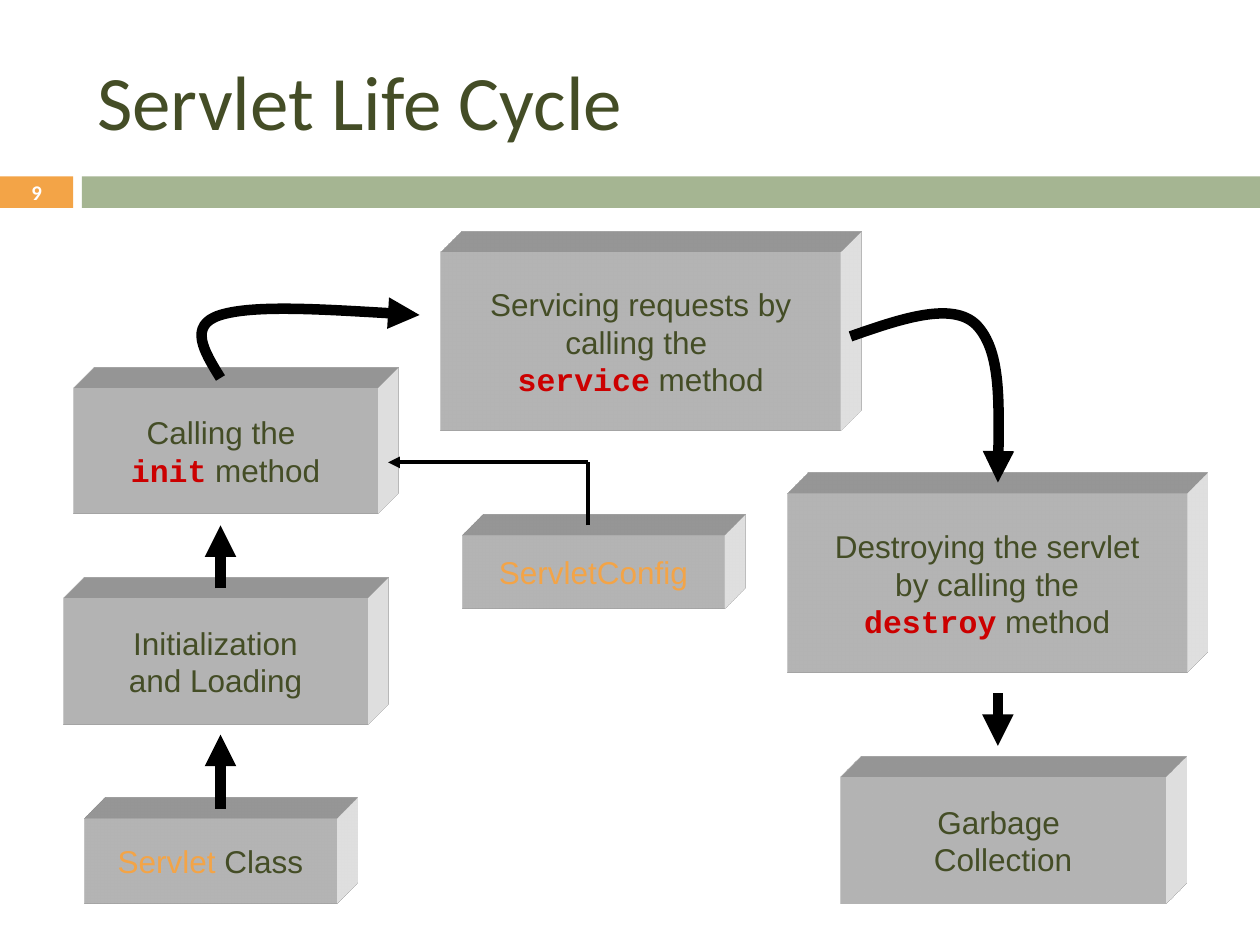
"""Build the Servlet Life Cycle slide."""
import pptx
import pptx.util
import pptx.dml.color
import pptx.enum.shapes
import pptx.enum.text
import pptx.oxml
import pptx.oxml.ns

Inches = pptx.util.Inches
RGBColor = pptx.dml.color.RGBColor
MIDDLE = pptx.enum.text.MSO_ANCHOR.MIDDLE
LEFT = pptx.enum.text.PP_ALIGN.LEFT
CENTER = pptx.enum.text.PP_ALIGN.CENTER

OLIVE = RGBColor(0x44, 0x4D, 0x26)
ORANGE = RGBColor(0xF3, 0xA4, 0x47)
SAGE = RGBColor(0xA5, 0xB5, 0x92)
RED = RGBColor(0xCC, 0x00, 0x00)
BLACK = RGBColor(0x00, 0x00, 0x00)
WHITE = RGBColor(0xFF, 0xFF, 0xFF)

NAMESPACE = pptx.oxml.ns.nsdecls("a")
SCENE = (f'<a:scene3d {NAMESPACE}><a:camera prst="legacyObliqueTopRight"/>'
         '<a:lightRig rig="legacyFlat3" dir="b"/></a:scene3d>')
EXTRUSION = (f'<a:sp3d {NAMESPACE} extrusionH="430200" prstMaterial="legacyMatte">'
             '<a:bevelT w="13500" h="13500" prst="angle"/>'
             '<a:bevelB w="13500" h="13500" prst="angle"/>'
             f'<a:extrusionClr><a:srgbClr val="{WHITE}"/></a:extrusionClr></a:sp3d>')


def add_text(paragraph, text, font="Arial", size=18, color=OLIVE, bold=False):
    """Append a formatted run to a paragraph."""
    run = paragraph.add_run()
    run.text = text
    run.font.name = font
    run.font.size = pptx.util.Pt(size)
    run.font.color.rgb = color
    run.font.bold = bold


class SlideBuilder:
    """Hold the slide and the style of its elements."""

    code = {"font": "Courier New", "color": RED, "bold": True}
    accent = {"color": ORANGE}

    def __init__(self, slide):
        """Keep the slide to draw on."""
        self.slide = slide

    def title(self, text, left, top, width, height):
        """Place and format the title placeholder."""
        shape = self.slide.shapes.title
        shape.left, shape.top = Inches(left), Inches(top)
        shape.width, shape.height = Inches(width), Inches(height)
        shape.text_frame.vertical_anchor = MIDDLE
        paragraph = shape.text_frame.paragraphs[0]
        paragraph.alignment = LEFT
        add_text(paragraph, text, font="Calibri", size=44)

    def rectangle(self, left, top, width, height, color):
        """Add a plain filled rectangle."""
        shape = self.slide.shapes.add_shape(
            pptx.enum.shapes.MSO_SHAPE.RECTANGLE,
            Inches(left), Inches(top), Inches(width), Inches(height))
        shape.shadow.inherit = False
        shape.fill.solid()
        shape.fill.fore_color.rgb = color
        shape.line.fill.background()
        shape.text_frame.vertical_anchor = MIDDLE
        return shape

    def block(self, left, top, width, height, lines):
        """Add an extruded block with centred lines of text."""
        shape = self.rectangle(left, top, width, height, WHITE)
        for markup in (SCENE, EXTRUSION):
            shape._element.spPr.append(pptx.oxml.parse_xml(markup))
        frame = shape.text_frame
        frame.word_wrap = False
        for index, runs in enumerate(lines):
            paragraph = frame.add_paragraph() if index else frame.paragraphs[0]
            paragraph.alignment = CENTER
            for text, style in runs:
                add_text(paragraph, text, **style)

    def stroke(self, shape, width, arrow):
        """Format a line and its arrowhead."""
        shape.line.color.rgb = BLACK
        shape.line.width = pptx.util.Pt(width)
        if arrow:
            shape.line._get_or_add_ln().append(pptx.oxml.parse_xml(
                f'<a:tailEnd {NAMESPACE} type="triangle"/>'))

    def line(self, start, end, width=6, arrow=True):
        """Add a straight connector."""
        connector = self.slide.shapes.add_connector(
            pptx.enum.shapes.MSO_CONNECTOR.STRAIGHT,
            *(Inches(value) for value in (*start, *end)))
        self.stroke(connector, width, arrow)
        connector._element.spPr.append(pptx.oxml.parse_xml(
            f'<a:effectLst {NAMESPACE}/>'))

    def curve(self, start, *controls):
        """Add a curved arrow, with three control points per cubic segment."""
        points = [(Inches(x), Inches(y)) for x, y in (start, *controls)]
        builder = self.slide.shapes.build_freeform(*points[0])
        builder.add_line_segments(points[1:], close=False)
        shape = builder.convert_to_shape()
        segments = shape._element.findall(".//" + pptx.oxml.ns.qn("a:lnTo"))
        for index in range(0, len(segments), 3):
            cubic = pptx.oxml.parse_xml(f'<a:cubicBezTo {NAMESPACE}/>')
            segments[index].addprevious(cubic)
            for segment in segments[index:index + 3]:
                cubic.append(segment[0])
                segment.getparent().remove(segment)
        shape.shadow.inherit = False
        shape.fill.background()
        self.stroke(shape, 6, True)


def main():
    """Build and save the presentation."""
    presentation = pptx.Presentation()
    presentation.slide_width = Inches(10)
    presentation.slide_height = Inches(7.5)
    builder = SlideBuilder(
        presentation.slides.add_slide(presentation.slide_layouts[5]))
    code, accent = builder.code, builder.accent

    number = builder.rectangle(0, 1.4, 0.58, 0.25, ORANGE)
    paragraph = number.text_frame.paragraphs[0]
    paragraph.alignment = CENTER
    add_text(paragraph, "9", font="Calibri", size=11.9, color=WHITE, bold=True)
    builder.rectangle(0.65, 1.4, 9.35, 0.25, SAGE)
    builder.title("Servlet Life Cycle", 0.67, 0.25, 8.92, 1.08)

    blocks = [
        (0.67, 6.5, 2, 0.67, [[("Servlet", accent), (" Class", {})]]),
        (0.5, 4.75, 2.42, 1, [[("Initialization", {})], [("and Loading", {})]]),
        (0.58, 3.08, 2.42, 1,
         [[("Calling the ", {})], [("init", code), (" method", {})]]),
        (3.5, 2, 3.17, 1.42,
         [[("Servicing requests by", {})], [("calling the ", {})],
          [("service", code), (" method", {})]]),
        (6.25, 3.92, 3.17, 1.42,
         [[("Destroying the servlet", {})], [(" by calling the ", {})],
          [("destroy", code), (" method", {})]]),
        (6.67, 6.17, 2.58, 1, [[("Garbage ", {})], [("Collection", {})]]),
        (3.67, 4.25, 2.08, 0.58, [[("ServletConfig", accent)]]),
    ]
    for block in blocks:
        builder.block(*block)

    builder.line((1.75, 6.42), (1.75, 5.83))
    builder.line((1.75, 4.67), (1.75, 4.17))
    builder.line((7.92, 5.5), (7.92, 5.92))
    builder.curve((1.75, 3), (1.62, 2.79), (1.49, 2.58), (1.75, 2.5),
                  (2.01, 2.42), (2.67, 2.46), (3.33, 2.5))
    builder.curve((6.75, 2.67), (7.15, 2.53), (7.56, 2.39), (7.75, 2.58),
                  (7.94, 2.78), (7.93, 3.31), (7.92, 3.83))
    builder.line((4.67, 4.17), (4.67, 3.67), width=2.25, arrow=False)
    builder.line((4.67, 3.67), (3.08, 3.67), width=2.25)

    presentation.save("out.pptx")


if __name__ == "__main__":
    main()
